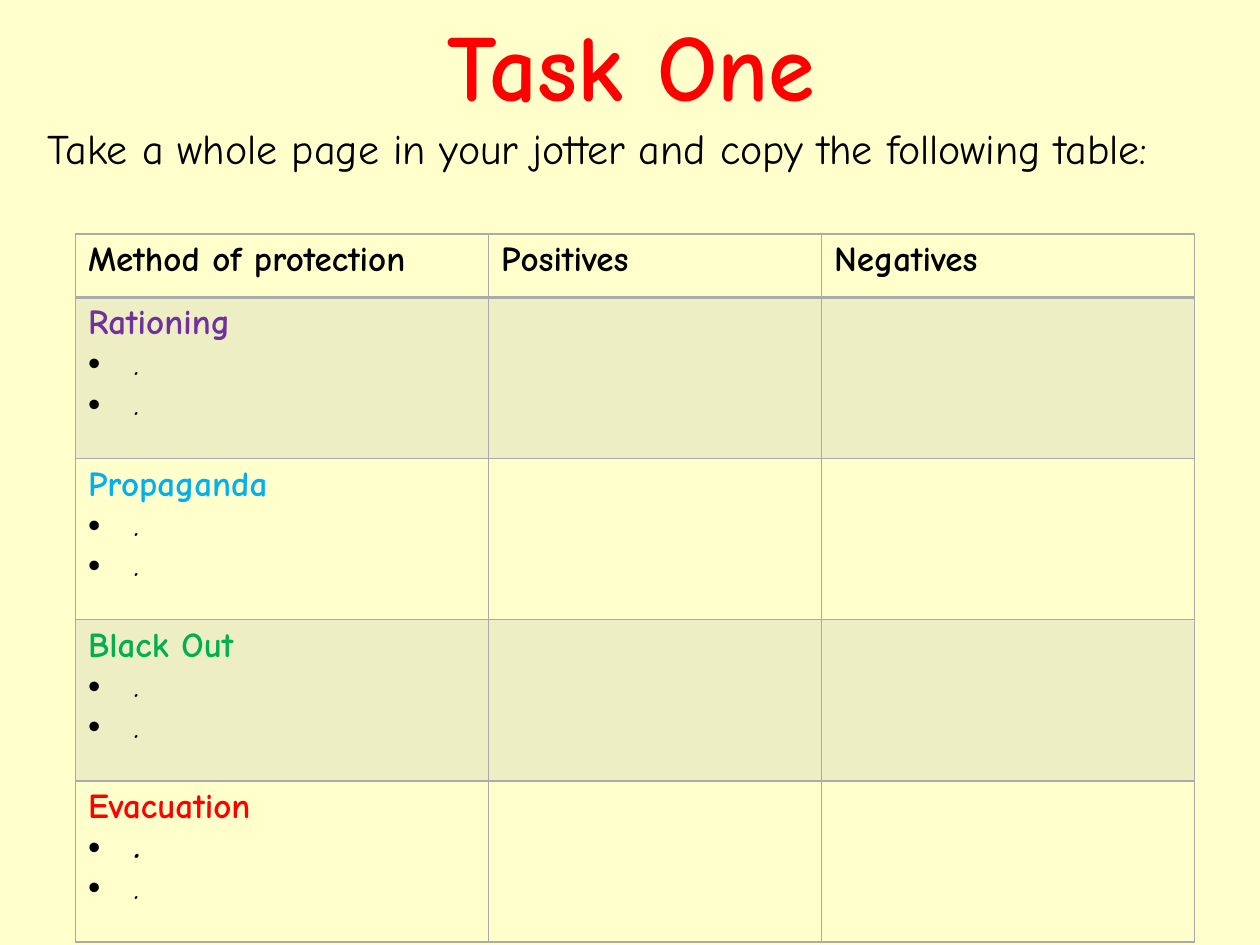
from lxml import etree
from pptx import Presentation
from pptx import util as u
from pptx.dml.color import RGBColor
from pptx.enum import text
from pptx.oxml import ns

COLORS = {
    "background": "FFFFCC",
    "black": "000000",
    "red": "FF0000",
    "purple": "7030A0",
    "blue": "00B0F0",
    "green": "00B050",
    "grey": "AAAAAA",
}
HEADERS = ["Method of protection", "Positives", "Negatives"]
METHODS = [
    ("Rationing", "purple", False),
    ("Propaganda", "blue", False),
    ("Black Out", "green", False),
    ("Evacuation", "red", True),
]
COLUMN_WIDTHS = [8.33, 6.71, 7.52]
HEADER_HEIGHT = 1.27
METHOD_HEIGHT = 3.25


def add_element(parent, tag, **attributes):
    return etree.SubElement(parent, ns.qn(tag), **attributes)


class SlideBuilder:
    font_name = "Comic Neue"
    indent = u.Cm(0.95)

    def __init__(self, presentation):
        self.slide = presentation.slides.add_slide(presentation.slide_layouts[1])
        fill = self.slide.background.fill
        fill.solid()
        fill.fore_color.rgb = self.color("background")

    def color(self, name):
        return RGBColor.from_string(COLORS[name])

    def style(self, paragraph, size, color="black", bold=False, italic=False):
        font = paragraph.font
        font.name = self.font_name
        font.size = u.Pt(size)
        font.bold = bold
        font.italic = italic
        font.color.rgb = self.color(color)

    def hang(self, paragraph, bullet=None):
        properties = paragraph._p.get_or_add_pPr()
        properties.set("marL", str(self.indent))
        properties.set("indent", str(-self.indent))
        if bullet:
            add_element(properties, "a:buFont", typeface="Arial")
            add_element(properties, "a:buChar", char=bullet)
        else:
            add_element(properties, "a:buNone")

    def place(self, shape, left, top, width, height):
        shape.left, shape.top = u.Cm(left), u.Cm(top)
        shape.width, shape.height = u.Cm(width), u.Cm(height)

    def title(self, words, *box):
        shape = self.slide.shapes.title
        self.place(shape, *box)
        frame = shape.text_frame
        frame.text = words
        frame.auto_size = text.MSO_AUTO_SIZE.NONE
        frame.vertical_anchor = text.MSO_ANCHOR.TOP
        frame.margin_top = u.Cm(0.08)
        paragraph = frame.paragraphs[0]
        paragraph.alignment = text.PP_ALIGN.CENTER
        paragraph.line_spacing = 0.9
        self.style(paragraph, 54, "red", bold=True)

    def body(self, words, *box):
        shape = self.slide.placeholders[1]
        self.place(shape, *box)
        frame = shape.text_frame
        frame.text = words
        frame.auto_size = text.MSO_AUTO_SIZE.NONE
        paragraph = frame.paragraphs[0]
        self.hang(paragraph)
        paragraph.space_before = u.Pt(0)
        self.style(paragraph, 24)

    def borders(self, cell, is_header, below_header):
        widths = {
            "L": 1,
            "R": 1,
            "T": 2 if below_header else 1,
            "B": 2 if is_header else 1,
        }
        properties = cell._tc.get_or_add_tcPr()
        for side, width in widths.items():
            line = add_element(properties, f"a:ln{side}", w=str(u.Pt(width)))
            fill = add_element(line, "a:solidFill")
            add_element(fill, "a:srgbClr", val=COLORS["grey"])

    def shade(self, cell, shaded):
        if not shaded:
            cell.fill.background()
            return
        cell.fill.solid()
        cell.fill.fore_color.rgb = self.color("grey")
        color = cell._tc.tcPr.find(ns.qn("a:solidFill"))[0]
        add_element(color, "a:alpha", val="20000")

    def method_cell(self, cell, name, color, first_bold):
        frame = cell.text_frame
        frame.text = name
        self.style(frame.paragraphs[0], 20, color, bold=True)
        for bold in (first_bold, False):
            paragraph = frame.add_paragraph()
            paragraph.text = "."
            self.hang(paragraph, "•")
            self.style(paragraph, 20, bold=bold, italic=True)

    def table(self, left, top):
        heights = [HEADER_HEIGHT] + [METHOD_HEIGHT] * len(METHODS)
        table = self.slide.shapes.add_table(
            len(heights), len(COLUMN_WIDTHS), u.Cm(left), u.Cm(top),
            u.Cm(sum(COLUMN_WIDTHS)), u.Cm(sum(heights)),
        ).table
        table.horz_banding = False
        for column, width in zip(table.columns, COLUMN_WIDTHS):
            column.width = u.Cm(width)
        for index, (row, height) in enumerate(zip(table.rows, heights)):
            row.height = u.Cm(height)
            for cell in row.cells:
                self.borders(cell, index == 0, index == 1)
                self.shade(cell, index % 2 == 1)
        for cell, header in zip(table.rows[0].cells, HEADERS):
            cell.text = header
            self.style(cell.text_frame.paragraphs[0], 20, bold=True)
        for index, method in enumerate(METHODS, start=1):
            self.method_cell(table.cell(index, 0), *method)


def main():
    presentation = Presentation()
    presentation.slide_width = u.Cm(25.4)
    presentation.slide_height = u.Cm(19.05)
    builder = SlideBuilder(presentation)
    builder.title("Task One", 1.3, 0.33, 22.86, 2.72)
    builder.body(
        "Take a whole page in your jotter and copy the following table:",
        0.71, 2.34, 24, 3,
    )
    builder.table(1.52, 4.72)
    presentation.save("out.pptx")


if __name__ == "__main__":
    main()
